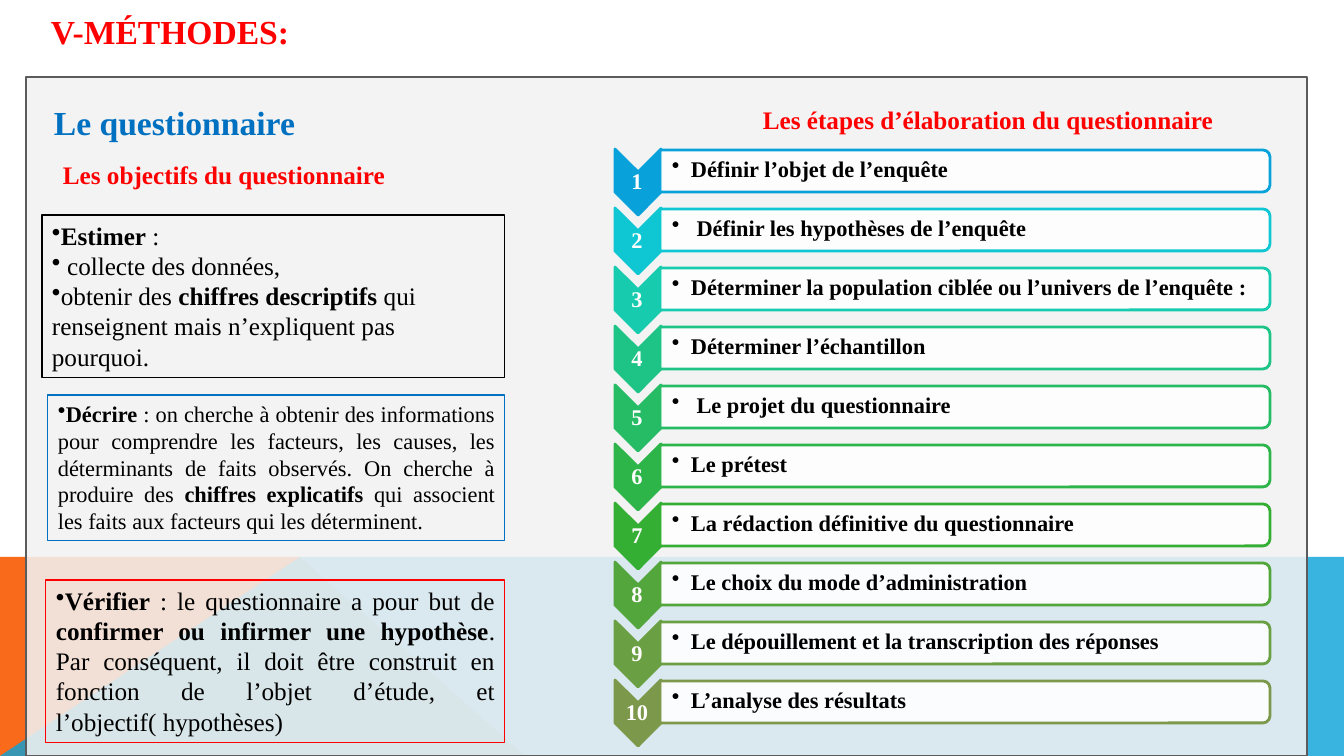
from lxml.etree import SubElement
from pptx import Presentation
from pptx.dml.color import RGBColor
from pptx.enum.shapes import MSO_SHAPE
from pptx.enum.text import MSO_ANCHOR, PP_ALIGN
from pptx.oxml.ns import qn
from pptx.util import Emu, Pt

PX = 914400 / 100.8
FONT = "Times New Roman"
C = {
    "white": "FFFFFF", "black": "000000", "red": "FF0000", "blue": "0070C0",
    "orange": "F96A1B", "sky": "08A1D9", "panel": "F2F2F2", "frame": "5A5B5D",
}
OBJECTIVES = [
    (42, 215, 463, 163, "black", 18, PP_ALIGN.LEFT, [
        "*Estimer* :",
        " collecte des données,",
        "obtenir des *chiffres descriptifs* qui renseignent mais n’expliquent pas pourquoi.",
    ]),
    (48, 395, 457, 146, "blue", 16, PP_ALIGN.JUSTIFY, [
        "*Décrire* : on cherche à obtenir des informations pour comprendre les facteurs, "
        "les causes, les déterminants de faits observés. On cherche à produire "
        "des *chiffres explicatifs* qui associent les faits aux facteurs qui les déterminent.",
    ]),
    (46, 580, 459, 163, "red", 18, PP_ALIGN.JUSTIFY, [
        "*Vérifier* : le questionnaire a pour but de *confirmer ou infirmer une hypothèse*. "
        "Par conséquent, il doit être construit en fonction de l’objet d’étude, "
        "et l’objectif( hypothèses)",
    ]),
]
STEPS = [
    ("Définir l’objet de l’enquête", "08A1D9"),
    (" Définir les hypothèses de l’enquête", "0FC7D2"),
    ("Déterminer la population ciblée ou l’univers de l’enquête :", "17CBAE"),
    ("Déterminer l’échantillon", "1EC386"),
    (" Le projet du questionnaire", "25BC65"),
    ("Le prétest", "2DB549"),
    ("La rédaction définitive du questionnaire", "35AE34"),
    ("Le choix du mode d’administration", "53A63B"),
    ("Le dépouillement et la transcription des réponses", "6A9F43"),
    ("L’analyse des résultats", "7C984A"),
]
STEP_TOP, STEP_PITCH = 149, 59


def px(n):
    """Turn pixels into EMU."""
    return Emu(round(n * PX))


def paint(sp, fill=None, opacity=100, line=None, width=2):
    """Set the fill, outline and shadow of a shape."""
    sp.shadow.inherit = False
    if fill:
        sp.fill.solid()
        sp.fill.fore_color.rgb = RGBColor.from_string(fill)
        if opacity < 100:
            color = sp.fill._xPr.find(qn("a:solidFill"))[0]
            SubElement(color, qn("a:alpha"), val=str(opacity * 1000))
    else:
        sp.fill.background()
    if line:
        sp.line.color.rgb = RGBColor.from_string(line)
        sp.line.width = Pt(width)
    else:
        sp.line.fill.background()


def add_polygon(s, points, fill, opacity=100):
    """Draw a closed outline through the points."""
    fb = s.shapes.build_freeform(*points[0], scale=PX)
    fb.add_line_segments(points[1:], close=True)
    paint(fb.convert_to_shape(), fill, opacity)


def add_preset(s, kind, x, y, w, h, rotation=0, **look):
    """Add a painted preset shape."""
    sp = s.shapes.add_shape(kind, px(x), px(y), px(w), px(h))
    sp.rotation = rotation
    paint(sp, **look)
    return sp


def format_runs(p, size, color, bold=True):
    """Give all runs of a paragraph one format."""
    for r in p.runs:
        r.font.name, r.font.size, r.font.bold = FONT, Pt(size), bold
        r.font.color.rgb = RGBColor.from_string(color)


def add_bullet(p, indent=0):
    """Put a round bullet with a hanging indent on a paragraph."""
    pPr = p._p.get_or_add_pPr()
    pPr.set("marL", str(px(indent)))
    pPr.set("indent", str(-px(indent)))
    SubElement(pPr, qn("a:buChar"), char="•")


def add_label(s, x, y, w, h, text, size, color, spacing=1.0):
    """Add a bold text box of one paragraph."""
    tf = s.shapes.add_textbox(px(x), px(y), px(w), px(h)).text_frame
    tf.word_wrap = True
    tf.text = text
    p = tf.paragraphs[0]
    p.line_spacing = spacing
    format_runs(p, size, color)
    return tf


def set_tight(tf, left=1):
    """Centre text vertically with narrow margins."""
    tf.vertical_anchor = MSO_ANCHOR.MIDDLE
    tf.margin_left = px(left)
    tf.margin_top = tf.margin_right = tf.margin_bottom = px(1)


def add_objective(s, x, y, w, h, line, size, align, lines):
    """Add an outlined box of bullets, with bold parts between asterisks."""
    sp = add_preset(s, MSO_SHAPE.RECTANGLE, x, y, w, h, line=C[line], width=0.75)
    tf = sp.text_frame
    tf.word_wrap = True
    tf.vertical_anchor = MSO_ANCHOR.TOP
    for i, text in enumerate(lines):
        p = tf.add_paragraph() if i else tf.paragraphs[0]
        p.alignment = align
        add_bullet(p)
        parts = text.split("*")
        for part in parts:
            p.add_run().text = part
        format_runs(p, size, C["black"], False)
        for r in p.runs[1::2]:
            r.font.bold = True
        for r in p.runs:
            if not r.text:
                p._p.remove(r._r)


def add_step(s, number, text, color):
    """Add a numbered chevron and its bar."""
    y = STEP_TOP + (number - 1) * STEP_PITCH
    add_preset(s, MSO_SHAPE.CHEVRON, 605, y + 10, 66, 46, 90, fill=color, line=color)
    tf = add_label(s, 614, y + 23, 46, 20, str(number), 16, C["white"], 0.9)
    set_tight(tf)
    tf.paragraphs[0].alignment = PP_ALIGN.CENTER
    add_preset(s, MSO_SHAPE.ROUND_2_SAME_RECTANGLE, 944, y - 283, 42, 610, 90,
               fill=C["white"], opacity=90, line=color)
    tf = add_label(s, 660, y + 2, 608, 38, text, 16, C["black"], 0.9)
    set_tight(tf, 12)
    add_bullet(tf.paragraphs[0], 19)


def main():
    """Build the slide and save it."""
    prs = Presentation()
    prs.slide_width, prs.slide_height = px(1344), px(756)
    s = prs.slides.add_slide(prs.slide_layouts[6])
    add_polygon(s, [(0, 756), (0, 557), (300, 557), (525, 756)], C["orange"])
    add_polygon(s, [(0, 756), (300, 557), (1344, 557), (1344, 756)], C["sky"], 80)
    add_preset(s, MSO_SHAPE.RECTANGLE, 26, 77, 1281, 679,
               fill=C["panel"], opacity=87, line=C["frame"])
    add_label(s, 41, 11, 319, 55, "V-MÉTHODES:", 24, C["red"], 0.9)
    add_label(s, 44, 97, 264, 50, "Le questionnaire", 24, C["blue"])
    add_label(s, 53, 154, 540, 40, "Les objectifs du questionnaire", 18, C["red"])
    add_label(s, 753, 99, 540, 40, "Les étapes d’élaboration du questionnaire", 18, C["red"])
    for objective in OBJECTIVES:
        add_objective(s, *objective)
    for number, (text, color) in enumerate(STEPS, 1):
        add_step(s, number, text, color)
    prs.save("out.pptx")


if __name__ == "__main__":
    main()
